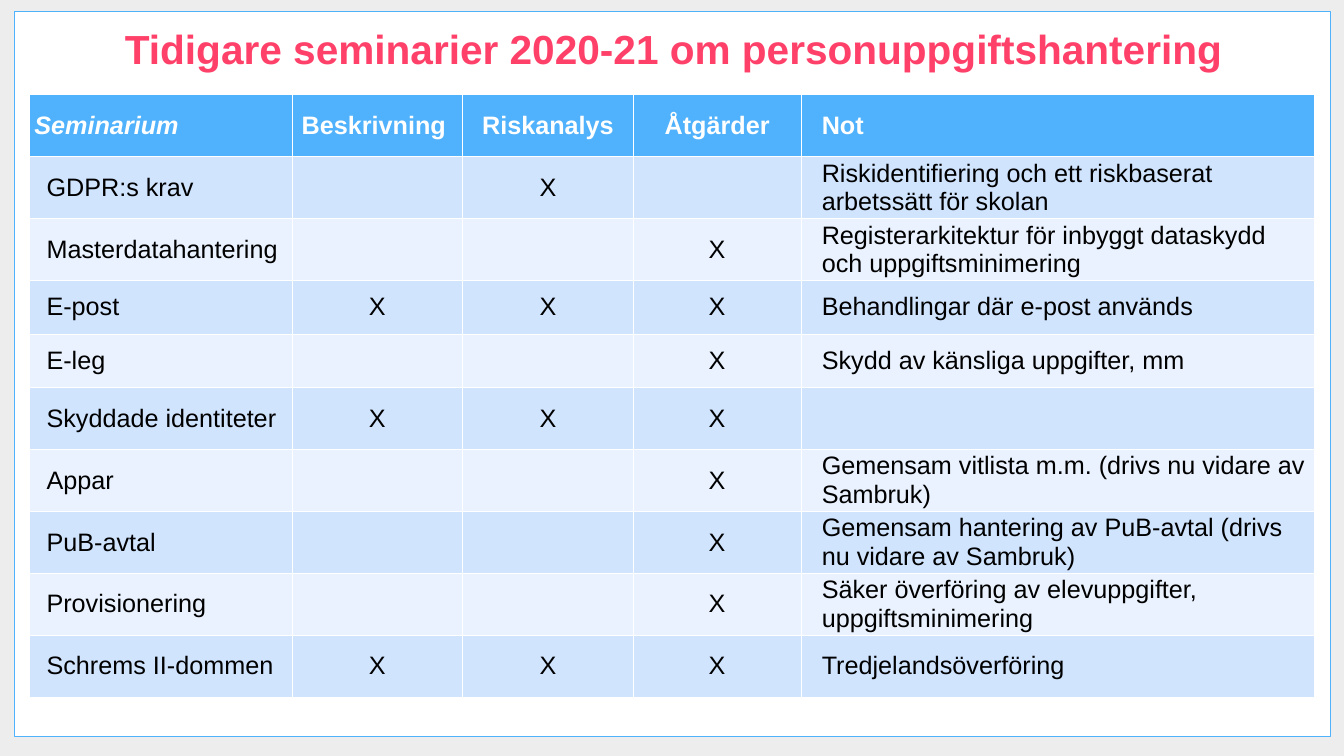
from dataclasses import dataclass

from lxml.etree import SubElement as Sub
from pptx import Presentation
from pptx.dml.color import RGBColor as RGB
from pptx.enum.shapes import MSO_SHAPE as Kind
from pptx.enum.text import MSO_ANCHOR as Anchor, PP_ALIGN as Align
from pptx.oxml.ns import qn
from pptx.util import Pt


@dataclass(frozen=True)
class Theme:
    font: str = "Arial"
    back: str = "EDEDED"
    white: str = "FFFFFF"
    black: str = "000000"
    blue: str = "50B2FC"
    pink: str = "FF4069"
    bands: tuple = ("D0E4FE", "E9F2FE")
    title: int = 58
    body: int = 36


def write(frame, text, size, color, align=Align.LEFT, bold=False,
          italic=False, indent=0):
    para = frame.paragraphs[0]
    para.alignment = align
    if indent:
        props = para._p.get_or_add_pPr()
        props.set("marL", str(Pt(indent)))
        props.set("indent", "0")
    run = para.add_run()
    run.text = text
    font = run.font
    font.name, font.size = Theme.font, Pt(size)
    font.bold, font.italic = bold, italic
    font.color.rgb = RGB.from_string(color)


class Deck:
    def __init__(self, theme, wide, high):
        self.theme = theme
        self.prs = Presentation()
        self.prs.slide_width, self.prs.slide_height = Pt(wide), Pt(high)
        self.slide = self.prs.slides.add_slide(self.prs.slide_layouts[6])
        fill = self.slide.background.fill
        fill.solid()
        fill.fore_color.rgb = RGB.from_string(theme.back)

    def panel(self, *box):
        shape = self.slide.shapes.add_shape(Kind.RECTANGLE, *map(Pt, box))
        shape.shadow.inherit = False
        shape.fill.solid()
        shape.fill.fore_color.rgb = RGB.from_string(self.theme.white)
        shape.line.color.rgb = RGB.from_string(self.theme.blue)
        shape.line.width = Pt(1)

    def label(self, box, text, **style):
        frame = self.slide.shapes.add_textbox(*map(Pt, box)).text_frame
        frame.word_wrap = True
        write(frame, text, **style)

    def border(self, cell, base):
        props = cell._tc.get_or_add_tcPr()
        for side, width in zip("LRTB", (1, 1, 1, base)):
            line = Sub(props, qn(f"a:ln{side}"), w=str(Pt(width)))
            solid = Sub(line, qn("a:solidFill"))
            Sub(solid, qn("a:srgbClr"), val=self.theme.white)

    def cell(self, cell, text, fill, base=1, **style):
        self.border(cell, base)
        cell.fill.solid()
        cell.fill.fore_color.rgb = RGB.from_string(fill)
        cell.vertical_anchor = Anchor.MIDDLE
        cell.margin_left = cell.margin_right = Pt(7.2)
        cell.margin_top = cell.margin_bottom = Pt(1)
        if text:
            write(cell.text_frame, text, size=self.theme.body, **style)

    def table(self, left, top, widths, heights, head, rows):
        theme = self.theme
        table = self.slide.shapes.add_table(
            len(heights), len(widths), Pt(left), Pt(top),
            Pt(sum(widths)), Pt(sum(heights))).table
        for col, width in zip(table.columns, widths):
            col.width = Pt(width)
        for row, height in zip(table.rows, heights):
            row.height = Pt(height)

        # Outer columns read from the left, the marks are centred
        last = len(widths) - 1
        indents = {0: 17.3, last: 22.3}
        for c, text in enumerate(head):
            self.cell(table.cell(0, c), text, theme.blue, base=3,
                      color=theme.white, bold=True, italic=c == 0,
                      align=Align.LEFT if c in indents else Align.CENTER,
                      indent=indents[c] if c == last else 0)
        for r, (name, marks, note) in enumerate(rows):
            texts = [name, *marks.replace("-", " "), note]
            for c, text in enumerate(texts):
                self.cell(table.cell(r + 1, c), text.strip(),
                          theme.bands[r % 2], color=theme.black,
                          align=Align.LEFT if c in indents else Align.CENTER,
                          indent=indents.get(c, 0))


HEAD = ("Seminarium", "Beskrivning ", "Riskanalys", "Åtgärder", "Not")
# Name, marks for the three middle columns, note
ROWS = (
    ("GDPR:s krav", "-X-",
     "Riskidentifiering och ett riskbaserat arbetssätt för skolan"),
    ("Masterdatahantering", "--X",
     "Registerarkitektur för inbyggt dataskydd och uppgiftsminimering"),
    ("E-post", "XXX", "Behandlingar där e-post används"),
    ("E-leg", "--X", "Skydd av känsliga uppgifter, mm"),
    ("Skyddade identiteter", "XXX", ""),
    ("Appar", "--X", "Gemensam vitlista m.m. (drivs nu vidare av Sambruk)"),
    ("PuB-avtal", "--X",
     "Gemensam hantering av PuB-avtal (drivs nu vidare av Sambruk)"),
    ("Provisionering", "--X",
     "Säker överföring av elevuppgifter, uppgiftsminimering"),
    ("Schrems II-dommen", "XXX", "Tredjelandsöverföring"),
)


def main():
    theme = Theme()
    deck = Deck(theme, 1920, 1080)

    # Frame and title
    deck.panel(20, 16, 1880, 1036)
    deck.label((24.5, 31, 1875.5, 78),
               "Tidigare seminarier 2020-21 om personuppgiftshantering",
               size=theme.title, color=theme.pink, bold=True,
               align=Align.CENTER)

    # Seminar table: two rows are lower than the rest
    heights = [76.5 if r in (3, 4) else 88.5 for r in range(len(ROWS) + 1)]
    deck.table(42, 135, (375, 244, 243.5, 240, 733.5), heights, HEAD, ROWS)

    deck.prs.save("out.pptx")


if __name__ == "__main__":
    main()
